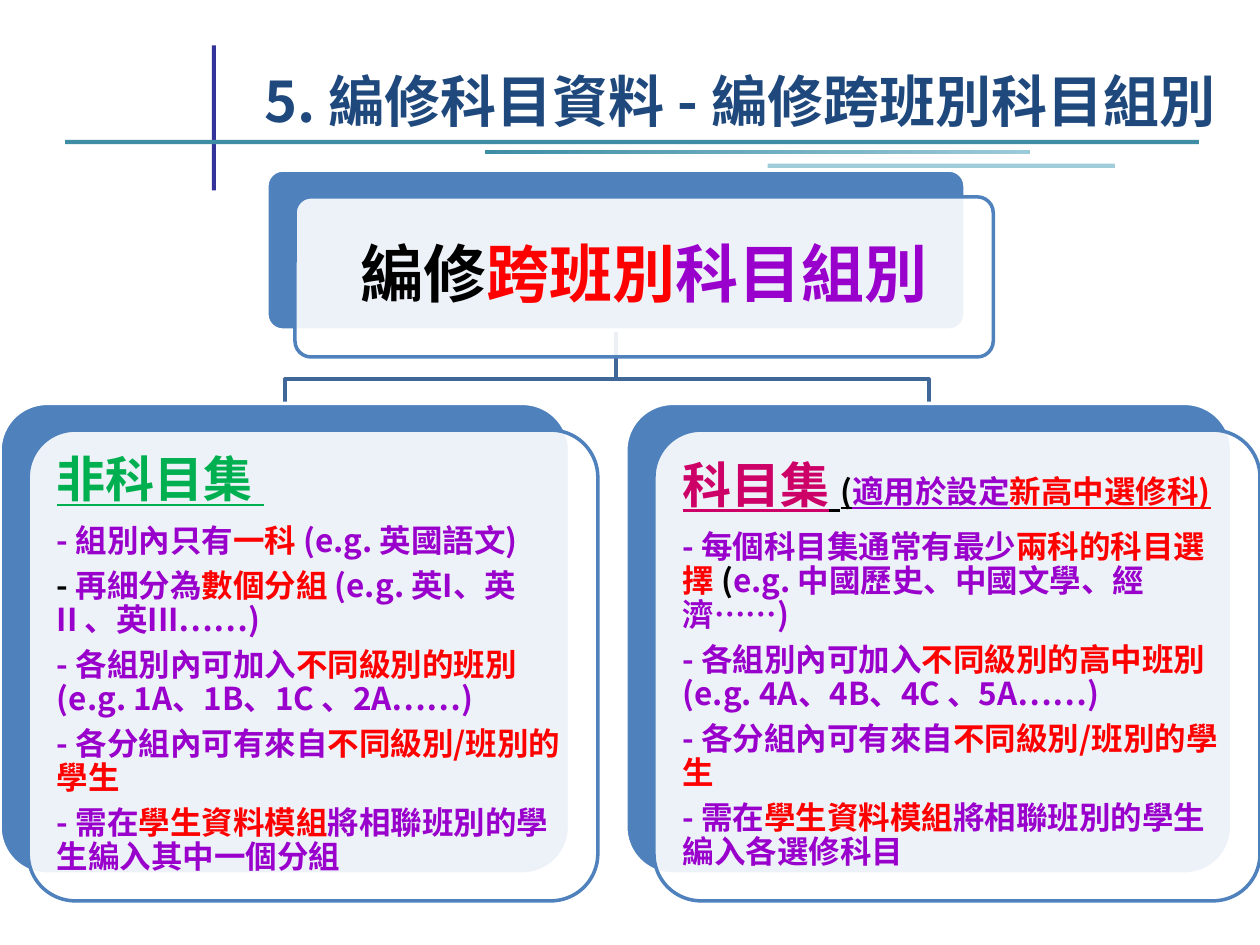
from lxml.etree import SubElement
from pptx import Presentation
from pptx.dml.color import RGBColor
from pptx.enum.shapes import MSO_SHAPE
from pptx.enum.text import MSO_ANCHOR, MSO_AUTO_SIZE, PP_ALIGN
from pptx.oxml.ns import qn
from pptx.util import Pt

WHITE = RGBColor(0xFF, 0xFF, 0xFF)
BLACK = RGBColor(0, 0, 0)
RED = RGBColor(0xFF, 0, 0)
PURPLE = RGBColor(0x99, 0, 0xCC)
GREEN = RGBColor(0, 0xB0, 0x50)
PINK = RGBColor(0xCC, 0, 0x66)
NAVY = RGBColor(0x1F, 0x49, 0x7D)
INDIGO = RGBColor(0x33, 0x33, 0x99)
TEAL = RGBColor(0x3F, 0x8D, 0xA5)
PALE_TEAL = RGBColor(0x9B, 0xCA, 0xD9)
LIGHT_TEAL = RGBColor(0xA1, 0xCD, 0xDB)
BLUE = RGBColor(0x4F, 0x81, 0xBD)
LINE_BLUE = RGBColor(0x3F, 0x67, 0x97)

CJK_FONT = "Noto Sans CJK TC"
CORNER = 0.1
OFFSET_X, OFFSET_Y = 16.1, 15.3
BODY_SIZE, HEAD_SIZE = 18, 28

# Cards: left, top, width, height
ROOT = (152.5, 97.2, 399, 91.5)
LEFT = (0, 230.5, 325.5, 269)
RIGHT = (357.6, 230.5, 346.3, 269)

# Paragraphs are lists of spans: text, colour, then format values that differ
ROOT_TEXT = [[("編修", BLACK), ("跨班別", RED), ("科目組別", PURPLE)]]
HEAD = {"size": Pt(HEAD_SIZE), "underline": True}
NOTE = {"underline": True}
SHARED_LINE = [("- 各分組內可有來自", PURPLE), ("不同級別/班別的學生", RED)]
LEFT_TEXT = [
    [("非科目集 ", GREEN, HEAD)],
    [("- 組別內只有", PURPLE), ("一科 ", RED), ("(e.g. 英國語文)", PURPLE)],
    [("- ", BLACK), ("再細分為", PURPLE), ("數個分組 ", RED),
     ("(e.g. 英I、英II 、英III……)", PURPLE)],
    [("- 各組別內可加入", PURPLE), ("不同級別的班別 ", RED),
     ("(e.g. 1A、1B、1C 、2A……)", PURPLE)],
    SHARED_LINE,
    [("- 需在", PURPLE), ("學生資料模組", RED),
     ("將相聯班別的學生編入其中一個分組", PURPLE)],
]
RIGHT_TEXT = [
    [("科目集", PINK, HEAD), (" ", BLACK, HEAD), ("(", BLACK, NOTE),
     ("適用於設定", PURPLE, NOTE), ("新高中選修科)", RED, NOTE)],
    [("- 每個科目集通常有最少", PURPLE), ("兩科的科目選擇 ", RED),
     ("(", BLACK), ("e.g. 中國歷史、中國文學、經濟……)", PURPLE)],
    [("- 各組別內可加入", PURPLE), ("不同級別的高中班別", RED),
     ("(e.g. 4A、4B、4C 、5A……)", PURPLE)],
    SHARED_LINE,
    [("- 需在", PURPLE), ("學生資料模組", RED),
     ("將相聯班別的學生編入各選修科目", PURPLE)],
]


def add_span(para, text, color, font=CJK_FONT, **values):
    span = para.add_run()
    span.text = text
    for name, value in {"name": font, "bold": True, **values}.items():
        setattr(span.font, name, value)
    span.font.color.rgb = color
    SubElement(span.font._element, qn("a:ea"), typeface=CJK_FONT)


def format_frame(frame, **values):
    defaults = {"word_wrap": True, "auto_size": MSO_AUTO_SIZE.NONE}
    for name, value in {**defaults, **values}.items():
        setattr(frame, name, value)


def add_title(page):
    title = page.shapes.title
    place = {"left": 144, "top": 20, "width": 564, "height": 60}
    for name, value in place.items():
        setattr(title, name, Pt(value))
    format_frame(title.text_frame, vertical_anchor=MSO_ANCHOR.BOTTOM,
                 margin_bottom=Pt(3.6))
    para = title.text_frame.paragraphs[0]
    para.alignment = PP_ALIGN.LEFT
    para.line_spacing = 1.0
    add_span(para, "5. 編修科目資料 - 編修跨班別科目組別", NAVY, size=Pt(32))


def add_bar(page, place, color, end_color=None):
    bar = page.shapes.add_shape(MSO_SHAPE.RECTANGLE, *map(Pt, place))
    bar.shadow.inherit = False
    bar.line.fill.background()
    if end_color is None:
        bar.fill.solid()
        bar.fill.fore_color.rgb = color
        return
    bar.fill.gradient()
    bar.fill.gradient_angle = 0
    for stop, position, shade in zip(bar.fill.gradient_stops, (0, 1),
                                     (color, end_color)):
        stop.position = position
        stop.color.rgb = shade


def add_branch(page, parent, child):
    """Draw the elbow from below the parent card to the top of the child."""
    start_x = parent[0] + parent[2] / 2
    start_y = parent[1] + parent[3]
    end_x = child[0] + child[2] / 2
    bend_y = child[1] - 13.8
    builder = page.shapes.build_freeform(Pt(start_x), Pt(start_y))
    corners = [(start_x, bend_y), (end_x, bend_y), (end_x, child[1])]
    builder.add_line_segments([(Pt(x), Pt(y)) for x, y in corners],
                              close=False)
    branch = builder.convert_to_shape()
    branch.shadow.inherit = False
    branch.fill.background()
    branch.line.color.rgb = LINE_BLUE
    branch.line.width = Pt(2)


def add_panel(page, place, fill, line, opacity=100):
    panel = page.shapes.add_shape(MSO_SHAPE.ROUNDED_RECTANGLE,
                                  *map(Pt, place))
    panel.adjustments[0] = CORNER
    panel.shadow.inherit = False
    panel.fill.solid()
    panel.fill.fore_color.rgb = fill
    panel.line.color.rgb = line
    panel.line.width = Pt(2)
    if opacity < 100:
        color = panel._element.spPr.find(qn("a:solidFill"))[0]
        SubElement(color, qn("a:alpha"), val=str(opacity * 1000))


def add_card(page, place, paragraphs, margin, align=PP_ALIGN.LEFT,
             size=BODY_SIZE, font=CJK_FONT):
    """Stack a blue panel, a white panel and the text inside its corners."""
    left, top, width, height = place
    left, top = left + OFFSET_X, top + OFFSET_Y
    add_panel(page, place, BLUE, WHITE)
    add_panel(page, (left, top, width, height), WHITE, BLUE, opacity=90)

    inset = 0.29 * CORNER * min(width, height)
    box = page.shapes.add_textbox(Pt(left + inset), Pt(top + inset),
                                  Pt(width - 2 * inset),
                                  Pt(height - 2 * inset))
    frame = box.text_frame
    sides = ("left", "top", "right", "bottom")
    format_frame(frame, vertical_anchor=MSO_ANCHOR.MIDDLE,
                 **{f"margin_{side}": Pt(margin) for side in sides})
    for index, spans in enumerate(paragraphs):
        para = frame.add_paragraph() if index else frame.paragraphs[0]
        para.alignment = align
        para.line_spacing = 0.9
        largest = HEAD_SIZE if HEAD in spans[0] else size
        para.space_after = Pt(round(0.35 * largest, 1))
        for text, color, *changes in spans:
            values = {"size": Pt(size), **(changes[0] if changes else {})}
            add_span(para, text, color, font, **values)


def main():
    deck = Presentation()
    deck.slide_width, deck.slide_height = Pt(720), Pt(540)
    page = deck.slides.add_slide(deck.slide_layouts[5])

    add_bar(page, (121, 26, 2.4, 82.8), INDIGO)
    add_bar(page, (37.2, 80, 648, 2.4), TEAL)
    add_bar(page, (277.2, 85.8, 311.5, 2.4), TEAL, PALE_TEAL)
    add_bar(page, (438.6, 93.5, 198.5, 2.4), LIGHT_TEAL)
    add_title(page)

    for child in (RIGHT, LEFT):
        add_branch(page, ROOT, child)
    add_card(page, ROOT, ROOT_TEXT, margin=10.8, align=PP_ALIGN.CENTER,
             size=36, font="Lato")
    add_card(page, LEFT, LEFT_TEXT, margin=8.6)
    add_card(page, RIGHT, RIGHT_TEXT, margin=8.6)
    deck.save("out.pptx")


if __name__ == "__main__":
    main()
